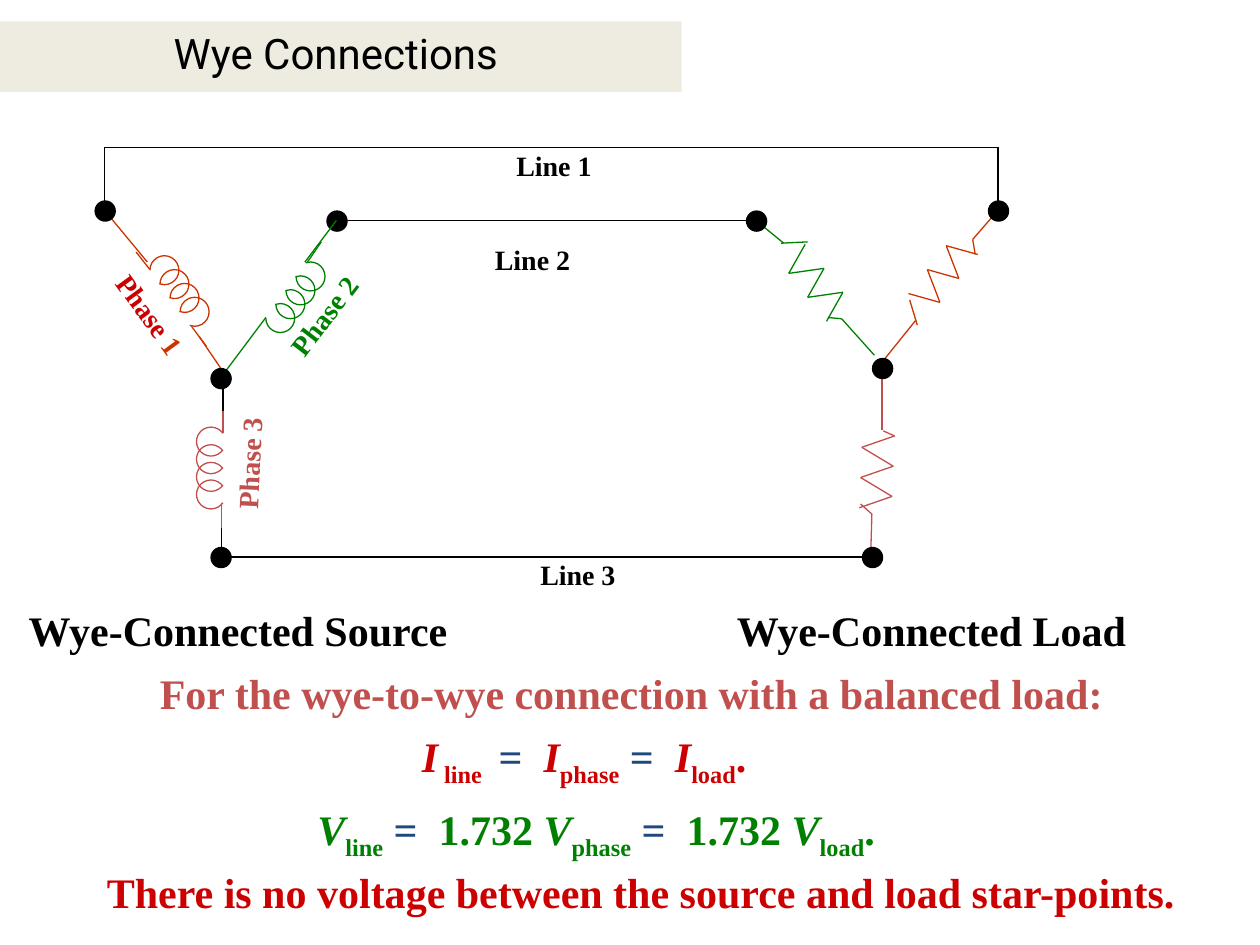
from dataclasses import dataclass
from itertools import pairwise

from lxml import etree
from pptx import Presentation
from pptx import util as u
from pptx.dml.color import RGBColor
from pptx.enum import shapes, text
from pptx.oxml import ns

PX = 9144  # EMU per px, 100 px to the inch
Point = tuple[int, int]


@dataclass(frozen=True)
class Theme:
    black: str = "000000"
    band: str = "EEECE1"
    red: str = "CC0000"
    orange: str = "CC3300"
    green: str = "008000"
    rose: str = "C0504D"
    blue: str = "1F497D"
    serif: str = "Times New Roman"
    sans: str = "Roboto"
    large: int = 24
    small: int = 16
    line: float = 0.75
    dot: int = 17
    turn: int = 23


T = Theme()


@dataclass(frozen=True)
class Run:
    text: str
    color: str = T.black
    italic: bool = False
    sub: bool = False
    bold: bool = True


@dataclass(frozen=True)
class Label:
    box: tuple[int, int, int, int]
    runs: tuple[Run, ...]
    size: int = T.large
    rot: float = 0


@dataclass(frozen=True)
class Phase:
    """A source coil: equal turns from a first corner, and its leads."""
    color: str
    corner: Point
    step: Point
    start: int  # degrees, clockwise from the right
    leads: tuple[tuple[Point, ...], ...]


@dataclass(frozen=True)
class Load:
    """A resistor: strokes alternate between back and forth."""
    color: str
    first: Point
    back: Point
    forth: Point
    leads: tuple[tuple[Point, ...], ...]


# Terminals, named by the centre of their dots
SRC_1, SRC_2, SRC_3, SRC_STAR = (83, 167), (267, 175), (175, 442), (175, 300)
LOAD_1, LOAD_2, LOAD_3, LOAD_STAR = (792, 167), (600, 175), (692, 442), (700, 292)
TOP = 117  # height of line 1

LINES = (
    (SRC_1, (SRC_1[0], TOP), (LOAD_1[0], TOP), LOAD_1),
    (SRC_2, LOAD_2),
    (SRC_3, LOAD_3),
)
PHASE_3_ENDS = (((177, 292), (177, 333)), ((176, 417), (176, 442)))

PHASES = (
    Phase(T.orange, (119, 203), (8, 11), 180,
          ((SRC_1, (117, 208)), ((108, 200), (119, 214)),
           ((152, 259), (164, 275)), ((158, 267), (175, 292)))),
    Phase(T.green, (235, 208), (-8, 11), 250,
          ((SRC_2, (242, 208)), ((255, 192), (244, 208)),
           ((211, 252), SRC_STAR))),
    Phase(T.rose, (156, 339), (0, 14), 35,
          (((177, 326), (177, 344)), ((176, 399), (176, 419)))),
)
LOADS = (
    Load(T.orange, (776, 202), (-25, -7), (10, 26),
         ((LOAD_1, (772, 190), (774, 202)), ((722, 238), (728, 258)),
          ((727, 254), (698, 290)))),
    Load(T.green, (639, 194), (-13, 23), (28, -4),
         ((LOAD_2, (622, 193)), ((620, 193), (641, 192)),
          ((657, 252), (668, 253), (694, 282)))),
    Load(T.rose, (710, 346), (-26, 9), (25, 15),
         ((LOAD_STAR, (700, 341)), ((701, 342), (710, 346)),
          ((683, 400), (692, 408), (691, 442)))),
)


def formula(*parts: tuple[str, str], color: str) -> tuple[Run, ...]:
    """Style each part by its kind: symbol, sub, equals or plain."""
    return tuple(Run(words, T.blue if kind == "equals" else color,
                     italic=kind == "symbol", sub=kind == "sub")
                 for kind, words in parts)


CURRENT = formula(
    ("symbol", "I"), ("sub", " line "), ("equals", " =  "),
    ("symbol", "I"), ("sub", "phase"), ("equals", " =  "),
    ("symbol", "I"), ("sub", "load"), ("plain", "."), color=T.red)
VOLTAGE = formula(
    ("symbol", "V"), ("sub", "line"), ("equals", " = "), ("plain", " 1.732 "),
    ("symbol", "V"), ("sub", "phase"), ("equals", " ="), ("plain", "  1.732 "),
    ("symbol", "V"), ("sub", "load"), ("plain", "."), color=T.green)

TITLE = Label((0, 17, 533, 55), (Run("Wye Connections", bold=False),))
LABELS = (
    # Lines
    Label((400, 113, 80, 37), (Run("Line 1"),), T.small),
    Label((383, 188, 80, 37), (Run("Line 2"),), T.small),
    Label((419, 438, 80, 37), (Run("Line 3"),), T.small),
    # Phases
    Label((73, 231, 92, 37), (Run("Phase", T.red), Run(" 1", T.orange)),
          T.small, 53.8),
    Label((211, 232, 92, 37), (Run("Phase 2", T.green),), T.small, 307.5),
    Label((152, 349, 92, 37), (Run("Phase 3", T.rose),), T.small, 272.7),
    # Captions and formulas
    Label((13, 475, 354, 50), (Run("Wye-Connected Source"),)),
    Label((575, 475, 330, 50), (Run("Wye-Connected Load"),)),
    Label((117, 525, 769, 50),
          (Run("For the wye-to-wye connection with a balanced load:", T.rose),)),
    Label((325, 575, 296, 50), CURRENT),
    Label((242, 633, 480, 50), VOLTAGE),
    Label((75, 683, 870, 50), (Run(
        "There is no voltage between the source and load star-points.", T.red),)),
)


def px(*values: int) -> list[u.Emu]:
    return [u.Emu(v * PX) for v in values]


def set_line(sp, color: str) -> None:
    sp.line.color.rgb = RGBColor.from_string(color)
    sp.line.width = u.Pt(T.line)


def add_wire(s, points: tuple[Point, ...], color: str = T.black) -> None:
    for a, b in pairwise(points):
        sp = s.shapes.add_connector(shapes.MSO_CONNECTOR.STRAIGHT, *px(*a, *b))
        set_line(sp, color)
        etree.SubElement(sp._element.spPr, ns.qn("a:effectLst"))


def add_phase(s, phase: Phase, turns: int = 4, sweep: int = 290) -> None:
    x, y = phase.corner
    dx, dy = phase.step
    for n in range(turns):
        sp = s.shapes.add_shape(shapes.MSO_SHAPE.ARC,
                                *px(x + n * dx, y + n * dy, T.turn, T.turn))
        # Arc angles are 60000ths of a degree; adjustments count 100000ths
        for i, angle in enumerate((phase.start, (phase.start + sweep) % 360)):
            sp.adjustments[i] = angle * 0.6
        sp.shadow.inherit = False
        sp.fill.background()
        set_line(sp, phase.color)
    for lead in phase.leads:
        add_wire(s, lead, phase.color)


def add_load(s, load: Load, strokes: int = 5) -> None:
    points = [load.first]
    for n in range(strokes):
        x, y = points[-1]
        dx, dy = load.forth if n % 2 else load.back
        points.append((x + dx, y + dy))
    for wire in (tuple(points), *load.leads):
        add_wire(s, wire, load.color)


def add_solid(s, kind, box: tuple[int, int, int, int], color: str) -> None:
    sp = s.shapes.add_shape(kind, *px(*box))
    sp.shadow.inherit = False
    sp.fill.solid()
    sp.fill.fore_color.rgb = RGBColor.from_string(color)
    sp.line.fill.background()


def add_dot(s, center: Point) -> None:
    x, y = (c - T.dot // 2 for c in center)
    add_solid(s, shapes.MSO_SHAPE.OVAL, (x, y, T.dot, T.dot), T.black)


def add_label(s, label: Label, font: str = T.serif):
    sp = s.shapes.add_textbox(*px(*label.box))
    sp.rotation = label.rot
    tf = sp.text_frame
    tf.word_wrap = False
    tf.auto_size = text.MSO_AUTO_SIZE.SHAPE_TO_FIT_TEXT
    for run in label.runs:
        r = tf.paragraphs[0].add_run()
        r.text = run.text
        form = {"name": font, "size": u.Pt(label.size),
                "bold": run.bold, "italic": run.italic}
        for key, value in form.items():
            setattr(r.font, key, value)
        r.font.color.rgb = RGBColor.from_string(run.color)
        if run.sub:
            r._r.get_or_add_rPr().set("baseline", "-25000")
    return tf


def main() -> None:
    prs = Presentation()
    prs.slide_width, prs.slide_height = px(1000, 750)
    s = prs.slides.add_slide(prs.slide_layouts[6])

    # Title band
    add_solid(s, shapes.MSO_SHAPE.RECTANGLE, (0, 17, 541, 56), T.band)
    tf = add_label(s, TITLE, T.sans)
    tf.word_wrap = True
    tf.auto_size = text.MSO_AUTO_SIZE.NONE
    tf.paragraphs[0].alignment = text.PP_ALIGN.CENTER

    # Circuit; the dot of phase 2 lies under its lead
    add_dot(s, SRC_2)
    for wire in LINES + PHASE_3_ENDS:
        add_wire(s, wire)
    for phase in PHASES:
        add_phase(s, phase)
    for load in LOADS:
        add_load(s, load)
    for dot in (SRC_1, SRC_3, SRC_STAR, LOAD_1, LOAD_2, LOAD_3, LOAD_STAR):
        add_dot(s, dot)

    # Text
    for label in LABELS:
        add_label(s, label)
    prs.save("out.pptx")


if __name__ == "__main__":
    main()
